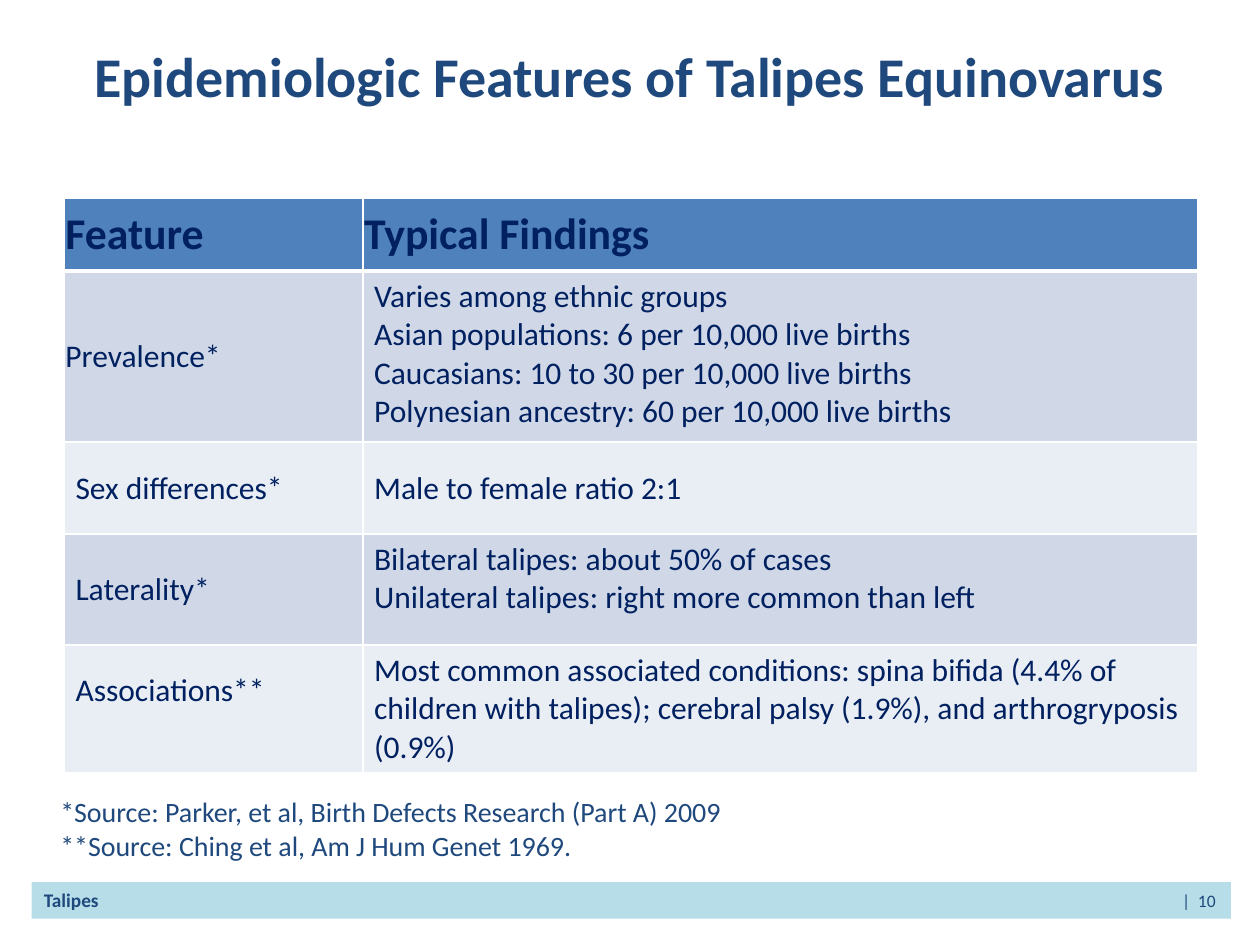
from lxml import etree
from pptx import Presentation
from pptx.dml.color import RGBColor
from pptx.enum.shapes import MSO_SHAPE as Shape
from pptx.enum.text import MSO_ANCHOR as Anchor, PP_ALIGN as Align
from pptx.oxml import parse_xml
from pptx.oxml.ns import nsdecls, qn
from pptx.util import Inches, Pt

NAVY, BLUE = "002060", "1F497D"
HEADER, BANDS = "4F81BD", ("D0D8E8", "E9EDF4")


def rgb(value):
    return RGBColor.from_string(value)


def write(frame, lines, size, color, bold=False, **formats):
    """Fill a text frame, one paragraph per line."""
    for name, value in formats.items():
        setattr(frame, name, value)
    frame.word_wrap = True
    for i, line in enumerate(lines):
        paragraph = frame.paragraphs[0] if i == 0 else frame.add_paragraph()
        run = paragraph.add_run()
        run.text = line
        for name, value in dict(name="Calibri", size=Pt(size), bold=bold).items():
            setattr(run.font, name, value)
        run.font.color.rgb = rgb(color)


deck = Presentation()
deck.slide_width, deck.slide_height = Inches(10), Inches(7.5)
slide = deck.slides.add_slide(deck.slide_layouts[6])

# Title
title = slide.shapes.add_textbox(Inches(0.5), Inches(0.3), Inches(9), Inches(0.61)).text_frame
write(title, ["Epidemiologic Features of Talipes Equinovarus"], 32, BLUE, True,
      vertical_anchor=Anchor.BOTTOM)
title.paragraphs[0].alignment = Align.CENTER
title.paragraphs[0].line_spacing = Pt(30)

# Table of findings
findings = [
    (["Feature"], ["Typical Findings"]),
    (["Prevalence*"], ["Varies among ethnic groups",
                       "Asian populations: 6 per 10,000 live births",
                       "Caucasians: 10 to 30 per 10,000 live births",
                       "Polynesian ancestry: 60 per 10,000 live births"]),
    (["Sex differences*"], ["Male to female ratio 2:1"]),
    (["Laterality*"], ["Bilateral talipes: about 50% of cases",
                       "Unilateral talipes: right more common than left"]),
    (["Associations**"], ["Most common associated conditions: spina bifida (4.4% of children "
                          "with talipes); cerebral palsy (1.9%), and arthrogryposis (0.9%)"]),
]
column_widths = (2.37, 6.63)
row_heights = (0.58, 1.36, 0.73, 0.88, 1.01)
tight = dict(margin_left=0.01, margin_top=0.01, margin_right=0.01, margin_bottom=0)
roomy = dict(margin_left=0.09, margin_top=0.05, margin_right=0.09, margin_bottom=0.05)
raised = dict(roomy, margin_bottom=0.34)
label_margins = (tight, tight, roomy, roomy, raised)

table = slide.shapes.add_table(len(findings), 2, Inches(0.51), Inches(1.57),
                               Inches(sum(column_widths)), Inches(sum(row_heights))).table
for column, width in zip(table.columns, column_widths):
    column.width = Inches(width)

for r, texts in enumerate(findings):
    table.rows[r].height = Inches(row_heights[r])
    for c, lines in enumerate(texts):
        cell = table.cell(r, c)
        is_header = r == 0
        margins = label_margins[r] if c == 0 or is_header else roomy
        for name, value in margins.items():
            setattr(cell, name, Inches(value))
        centred = c == 0 or r in (0, 2)
        cell.vertical_anchor = Anchor.MIDDLE if centred else Anchor.TOP
        cell.fill.solid()
        cell.fill.fore_color.rgb = rgb(HEADER if is_header else BANDS[(r - 1) % 2])
        write(cell.text_frame, lines, 25 if is_header else 18, NAVY, is_header)

        # White rules, thicker beneath the header
        for i, side in enumerate("LRTB"):
            thick = (r, side) in ((0, "B"), (1, "T"))
            cell._tc.get_or_add_tcPr().insert(i, parse_xml(
                f'<a:ln{side} {nsdecls("a")} w="{Pt(3 if thick else 1)}"><a:solidFill>'
                f'<a:srgbClr val="FFFFFF"/></a:solidFill></a:ln{side}>'))

# Footer bar with the page number on a right tab
footer = slide.shapes.add_shape(Shape.RECTANGLE, Inches(0.25), Inches(7), Inches(9.52), Inches(0.29))
footer.shadow.inherit = False
footer.fill.solid()
footer.fill.fore_color.rgb = rgb("B7DEE8")
footer.line.fill.background()
write(footer.text_frame, ["Talipes\t"], 11, BLUE, True, vertical_anchor=Anchor.MIDDLE)
footer_line = footer.text_frame.paragraphs[0]
footer_line.alignment = Align.LEFT
page = footer_line.add_run()
page.text = "|  10"
for name, value in dict(name="Calibri", size=Pt(10), bold=False).items():
    setattr(page.font, name, value)
page.font.color.rgb = rgb(BLUE)
tabs = etree.SubElement(footer_line._p.get_or_add_pPr(), qn("a:tabLst"))
etree.SubElement(tabs, qn("a:tab"), pos=str(Inches(9.3)), algn="r")

# Sources
sources = slide.shapes.add_textbox(Inches(0.38), Inches(6.26), Inches(7.85), Inches(0.64)).text_frame
write(sources, ["*Source: Parker, et al, Birth Defects Research (Part A) 2009",
                "**Source: Ching et al, Am J Hum Genet 1969."], 16, BLUE)

deck.save("out.pptx")
